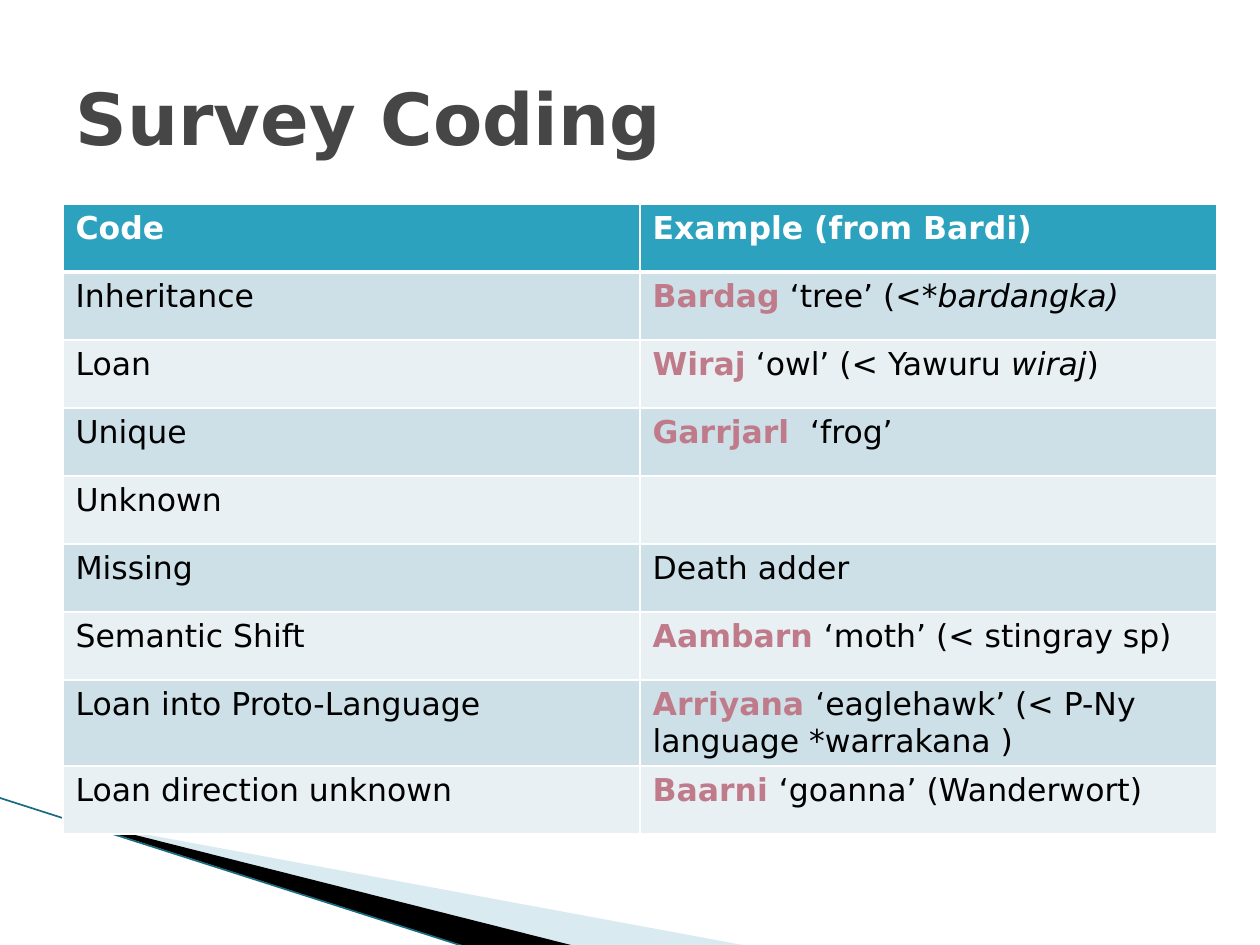
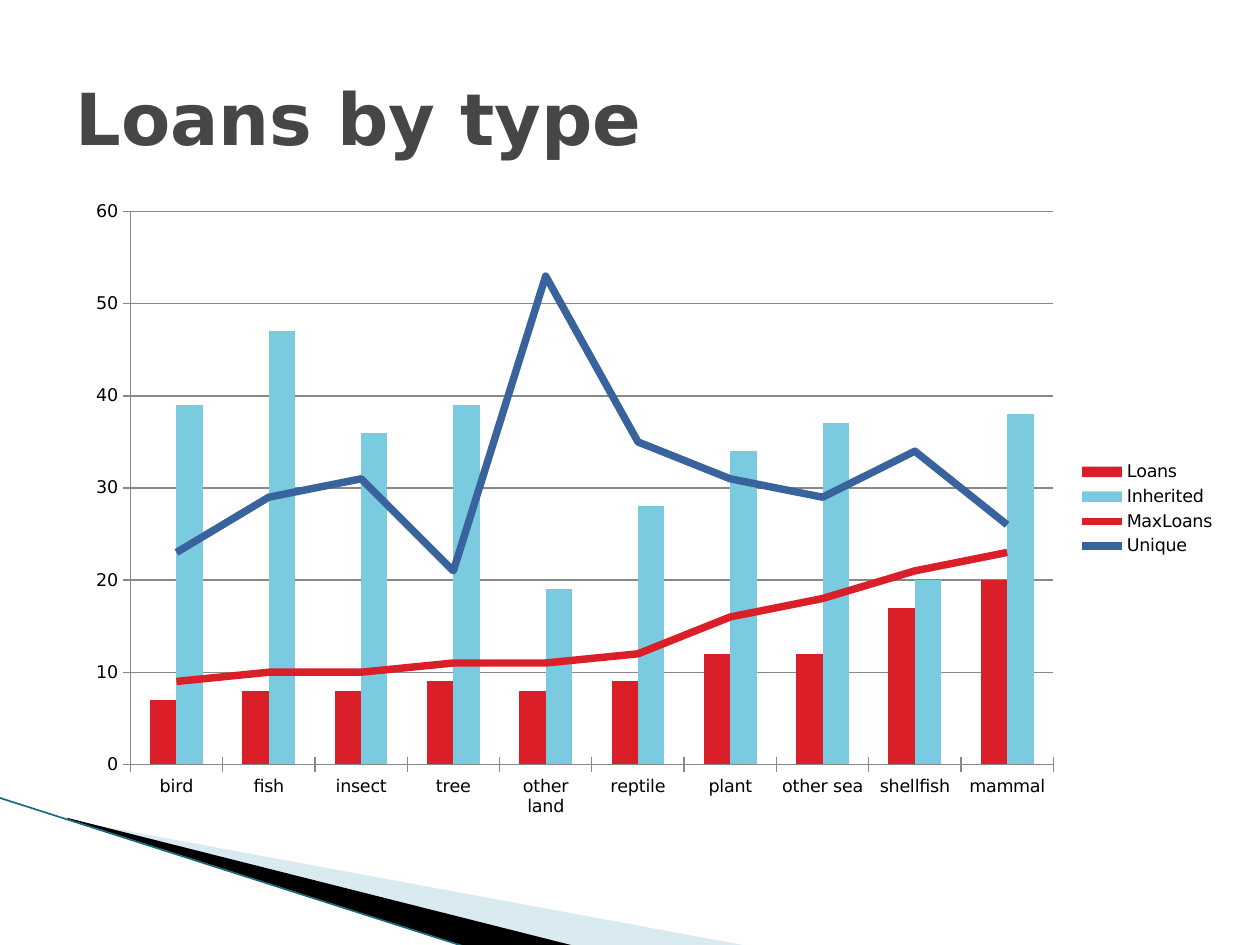
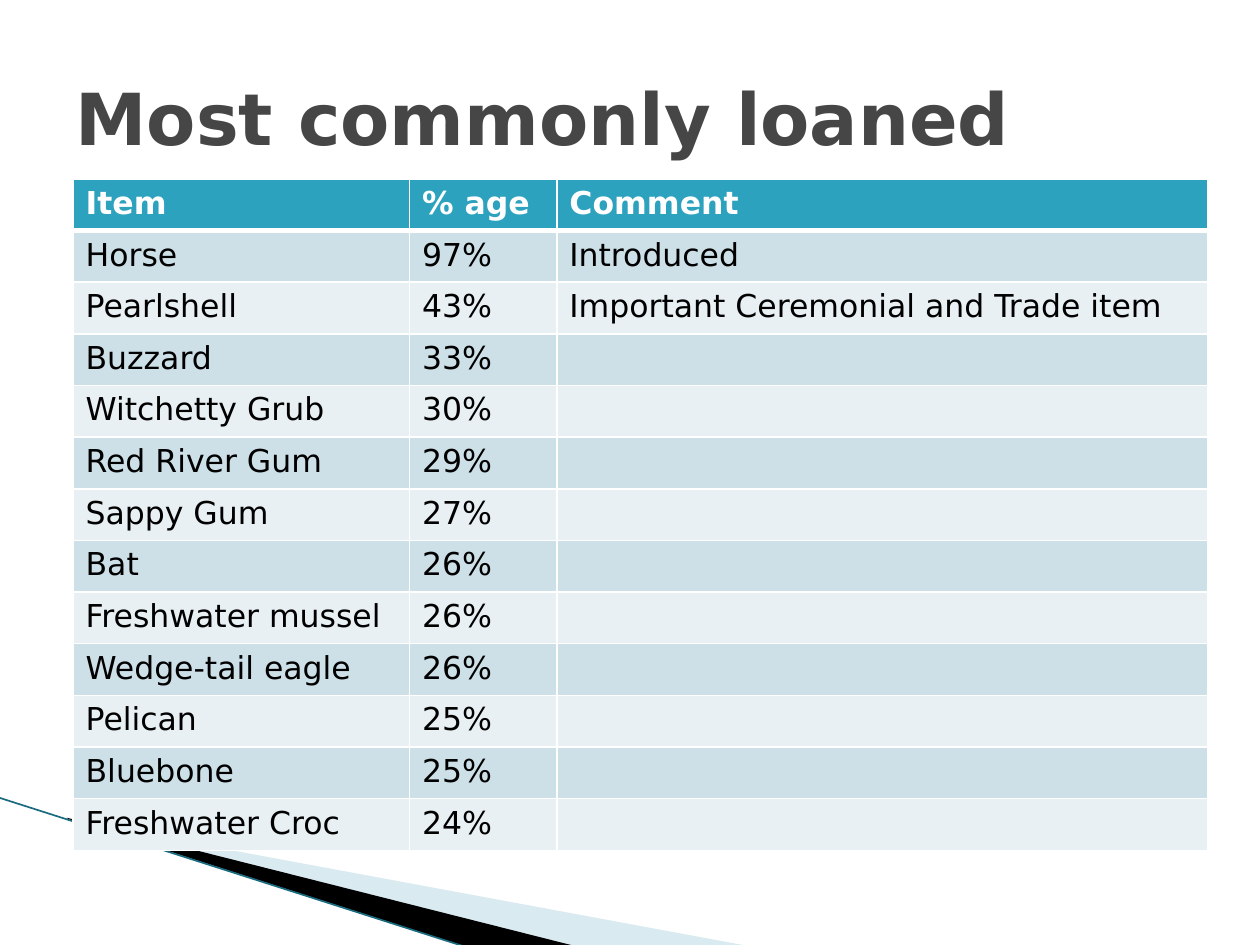
"""Build three slides on loanwords: survey codes, loans by type and the most loaned items."""
from lxml import etree
from pptx import Presentation
from pptx.chart.data import CategoryChartData
from pptx.dml.color import RGBColor
from pptx.enum.chart import XL_CHART_TYPE as ChartType
from pptx.enum.chart import XL_LEGEND_POSITION as LegendPosition
from pptx.enum.chart import XL_MARKER_STYLE as MarkerStyle
from pptx.enum.chart import XL_TICK_MARK as TickMark
from pptx.enum.shapes import MSO_CONNECTOR as Connector
from pptx.enum.text import MSO_ANCHOR as Anchor
from pptx.enum.text import PP_ALIGN as Align
from pptx.oxml import parse_xml
from pptx.oxml.ns import nsdecls, qn
from pptx.util import Inches, Pt

FONT = "DejaVu Sans"
WHITE, BLACK, TITLE_GREY, GRID_GREY = "FFFFFF", "000000", "464646", "888888"
HEADER, BAND_DARK, BAND_LIGHT = "2DA2BF", "CDE0E8", "E8F0F4"
TERM, RED, SKY, NAVY = "C07B8A", "DA1F28", "7ACBE0", "39639D"
SWOOSH_BLUE, SWOOSH_EDGE = "A0CBDC", "1A6B7F"

CODES = [
    ("Code", "Example (from Bardi)"),
    ("Inheritance", [("Bardag", "term"), (" ‘tree’ (<", ""), ("*bardangka)", "italic")]),
    ("Loan", [("Wiraj", "term"), (" ‘owl’ (< Yawuru ", ""), ("wiraj", "italic"), (")", "")]),
    ("Unique", [("Garrjarl ", "term"), (" ‘frog’", "")]),
    ("Unknown", ""),
    ("Missing", "Death adder"),
    ("Semantic Shift", [("Aambarn ", "term"), ("‘moth’ (< stingray sp)", "")]),
    ("Loan into Proto-Language",
     [("Arriyana ", "term"), ("‘eaglehawk’ (< P-Ny language *warrakana )", "")]),
    ("Loan direction unknown", [("Baarni ", "term"), ("‘goanna’ (Wanderwort)", "")]),
]
LOANED = [
    ("Item", "% age", "Comment"),
    ("Horse", "97%", "Introduced"),
    ("Pearlshell", "43%", "Important Ceremonial and Trade item"),
    ("Buzzard", "33%", ""),
    ("Witchetty Grub", "30%", ""),
    ("Red River Gum", "29%", ""),
    ("Sappy Gum", "27%", ""),
    ("Bat", "26%", ""),
    ("Freshwater mussel", "26%", ""),
    ("Wedge-tail eagle", "26%", ""),
    ("Pelican", "25%", ""),
    ("Bluebone", "25%", ""),
    ("Freshwater Croc", "24%", ""),
]
TYPES = ["bird", "fish", "insect", "tree", "other land", "reptile", "plant",
         "other sea", "shellfish", "mammal"]
COLUMNS = [
    ("Loans", RED, (7, 8, 8, 9, 8, 9, 12, 12, 17, 20)),
    ("Inherited", SKY, (39, 47, 36, 39, 19, 28, 34, 37, 20, 38)),
]
LINES = [
    ("MaxLoans", RED, (9, 10, 10, 11, 11, 12, 16, 18, 21, 23)),
    ("Unique", NAVY, (23, 29, 31, 21, 53, 35, 31, 29, 34, 26)),
]


def rgb(value):
    return RGBColor.from_string(value)


def paint(fill, color):
    fill.solid()
    fill.fore_color.rgb = rgb(color)


def set_font(font, size, color, bold=False):
    font.name, font.size, font.bold = FONT, Pt(size), bold
    font.color.rgb = rgb(color)


def add_wedge(slide, points, color, opacity=100):
    start, *rest = [(Inches(x), Inches(y)) for x, y in points]
    builder = slide.shapes.build_freeform(*start)
    builder.add_line_segments(rest)
    wedge = builder.convert_to_shape()
    wedge.shadow.inherit = False
    wedge.line.fill.background()
    paint(wedge.fill, color)
    if opacity < 100:
        tint = wedge._element.spPr.find(qn("a:solidFill")).find(qn("a:srgbClr"))
        etree.SubElement(tint, qn("a:alpha"), val=str(opacity * 1000))


def add_swoosh(slide):
    add_wedge(slide, [(0.55, 6.51), (5.95, 7.51), (4.56, 7.51), (0.55, 6.5)], SWOOSH_BLUE, 40)
    add_wedge(slide, [(0.53, 6.49), (4.57, 7.51), (3.72, 7.52), (0.54, 6.5)], BLACK)
    edge = slide.shapes.add_connector(
        Connector.STRAIGHT, Inches(-0.01), Inches(6.33), Inches(3.71), Inches(7.52))
    edge.line.color.rgb = rgb(SWOOSH_EDGE)
    edge.line.width = Pt(0.95)
    etree.SubElement(edge._element.spPr, qn("a:effectLst"))


def add_titled_slide(deck, text):
    slide = deck.slides.add_slide(deck.slide_layouts[5])
    add_swoosh(slide)
    title = slide.shapes.title
    title.left, title.top = Inches(0.5), Inches(0.3)
    title.width, title.height = Inches(9), Inches(1.25)
    title.text_frame.vertical_anchor = Anchor.MIDDLE
    title.text_frame.text = text
    para = title.text_frame.paragraphs[0]
    para.alignment = Align.LEFT
    set_font(para.font, 41, TITLE_GREY, bold=True)
    return slide


def add_borders(cell, top, bottom):
    properties = cell._tc.get_or_add_tcPr()
    for side, width in (("L", 1), ("R", 1), ("T", top), ("B", bottom)):
        properties.append(parse_xml(
            f'<a:ln{side} {nsdecls("a")} w="{Pt(width)}"><a:solidFill>'
            f'<a:srgbClr val="{WHITE}"/></a:solidFill></a:ln{side}>'))


def fill_cell(cell, content, row):
    is_header = row == 0
    add_borders(cell, top=3 if row == 1 else 1, bottom=3 if is_header else 1)
    paint(cell.fill, HEADER if is_header else BAND_DARK if row % 2 else BAND_LIGHT)
    para = cell.text_frame.paragraphs[0]
    set_font(para.font, 18, WHITE if is_header else BLACK, bold=is_header)
    spans = [(content, "")] if isinstance(content, str) else content
    for text, style in spans:
        if not text:
            continue
        span = para.add_run()
        span.text = text
        if style == "term":
            span.font.bold = True
            span.font.color.rgb = rgb(TERM)
        elif style == "italic":
            span.font.italic = True


def add_banded_table(slide, rows, left, top, widths, row_height):
    table = slide.shapes.add_table(
        len(rows), len(widths), Inches(left), Inches(top),
        Inches(sum(widths)), Inches(row_height * len(rows))).table
    for column, width in zip(table.columns, widths):
        column.width = Inches(width)
    for row, contents in enumerate(rows):
        for column, content in enumerate(contents):
            fill_cell(table.cell(row, column), content, row)


def move_to_line_plot(chart, count):
    """Move the last series of a column chart to a line plot on the same axes."""
    bars = chart.plots[0]._element
    lines = parse_xml(
        f'<c:lineChart {nsdecls("c")}><c:grouping val="standard"/>'
        '<c:varyColors val="0"/><c:marker val="1"/></c:lineChart>')
    bars.addnext(lines)
    marker = lines.find(qn("c:marker"))
    for series in bars.findall(qn("c:ser"))[-count:]:
        for flag in series.findall(qn("c:invertIfNegative")):
            series.remove(flag)
        marker.addprevious(series)
    for axis in bars.findall(qn("c:axId")):
        etree.SubElement(lines, qn("c:axId"), val=axis.get("val"))


def add_loans_chart(slide):
    data = CategoryChartData()
    data.categories = TYPES
    for name, _, values in COLUMNS + LINES:
        data.add_series(name, values)
    chart = slide.shapes.add_chart(
        ChartType.COLUMN_CLUSTERED, Inches(0.58), Inches(1.5),
        Inches(9.17), Inches(5.08), data).chart
    move_to_line_plot(chart, len(LINES))
    chart.has_title = False
    set_font(chart.font, 10, BLACK)
    chart.has_legend = True
    chart.legend.position = LegendPosition.RIGHT
    chart.legend.include_in_layout = False
    for axis in (chart.category_axis, chart.value_axis):
        axis.major_tick_mark = TickMark.CROSS
        axis.format.line.color.rgb = rgb(GRID_GREY)
    scale = chart.value_axis
    scale.minimum_scale, scale.maximum_scale, scale.major_unit = 0, 60, 10
    scale.major_gridlines.format.line.color.rgb = rgb(GRID_GREY)

    column_plot, line_plot = chart.plots
    column_plot.vary_by_categories = False
    column_plot.gap_width, column_plot.overlap = 150, 0
    for series, (_, color, _) in zip(column_plot.series, COLUMNS):
        paint(series.format.fill, color)
    for series, (_, color, _) in zip(line_plot.series, LINES):
        series.smooth = False
        series.marker.style = MarkerStyle.NONE
        series.format.line.color.rgb = rgb(color)
        series.format.line.width = Pt(4.25)


def main():
    deck = Presentation()
    deck.slide_width, deck.slide_height = Inches(10), Inches(7.5)
    coding = add_titled_slide(deck, "Survey Coding")
    add_banded_table(coding, CODES, 0.5, 1.62, [4.58, 4.58], 0.54)
    add_loans_chart(add_titled_slide(deck, "Loans by type"))
    loaned = add_titled_slide(deck, "Most commonly loaned")
    add_banded_table(loaned, LOANED, 0.58, 1.42, [2.67, 1.17, 5.17], 0.41)
    deck.save("out.pptx")


if __name__ == "__main__":
    main()
